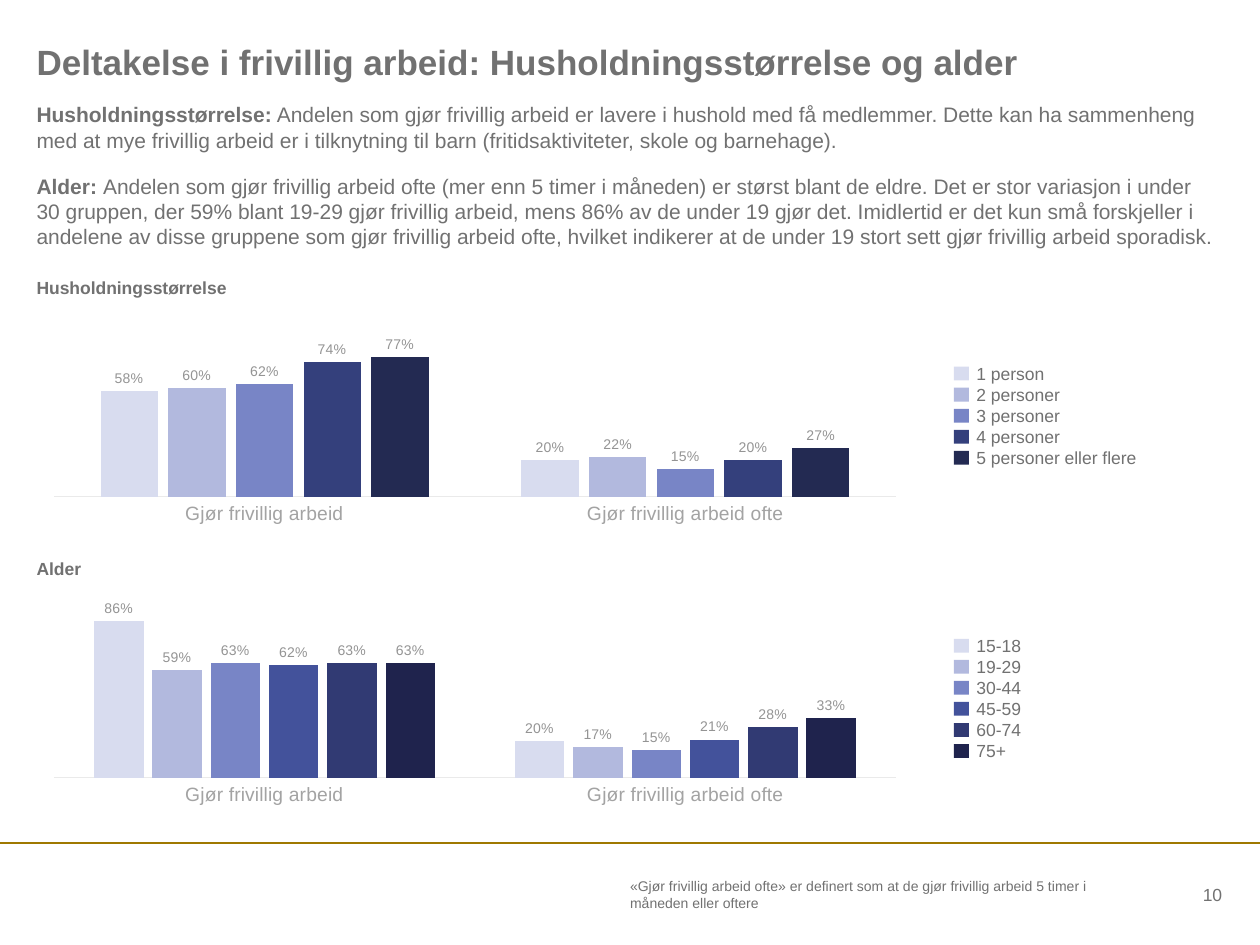
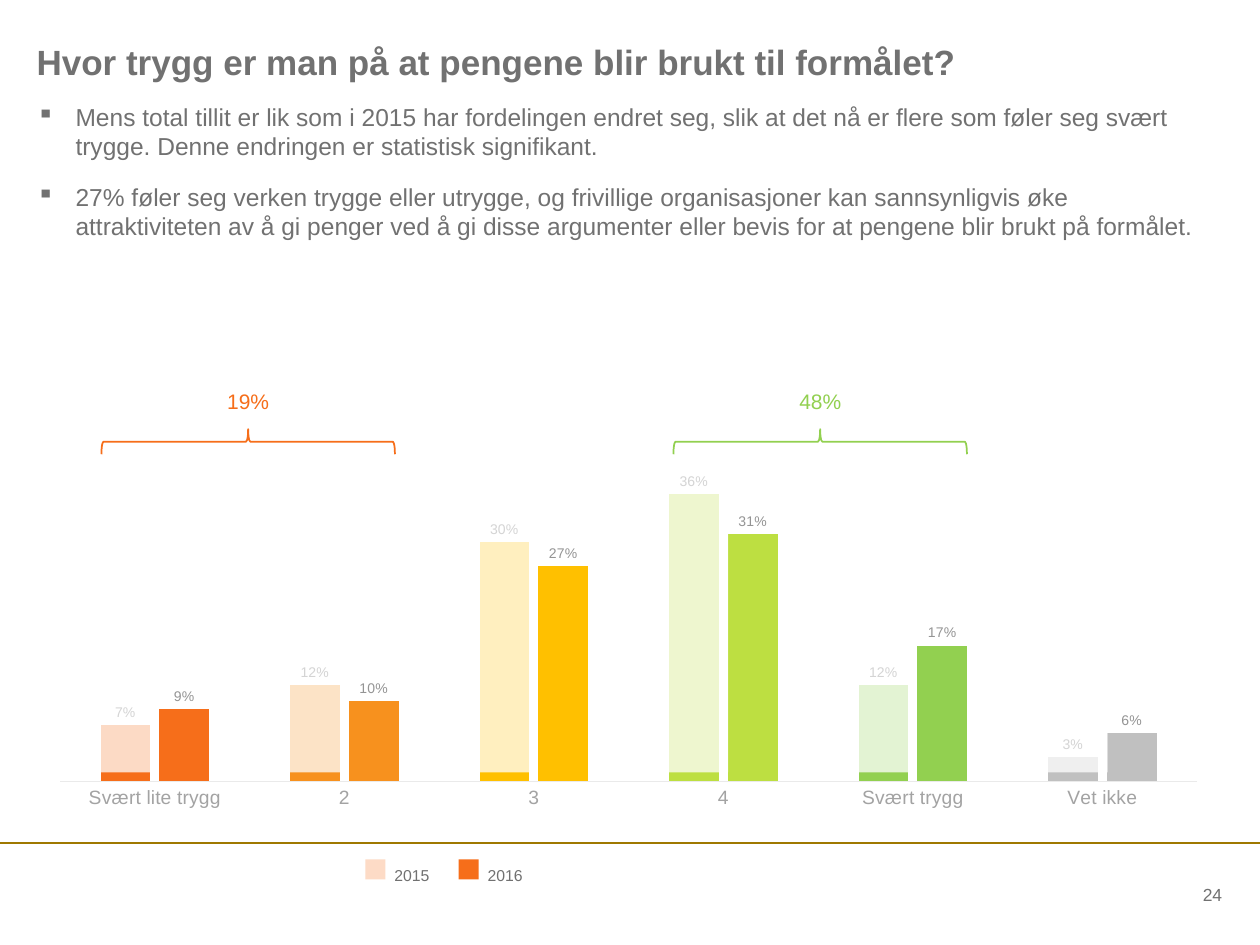
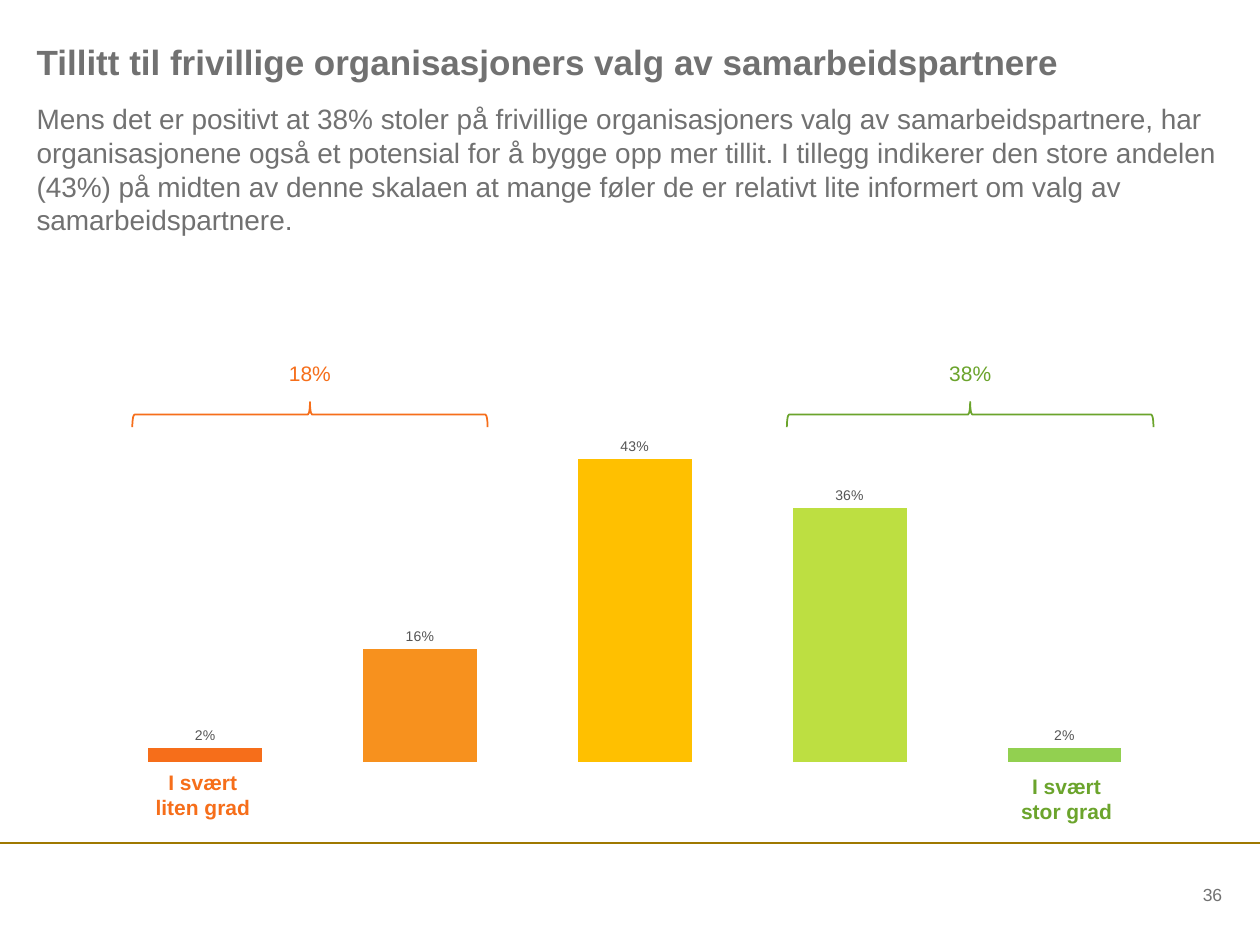
from collections import namedtuple

from lxml import etree
from pptx import Presentation, util as u
from pptx.chart.data import CategoryChartData
from pptx.dml.color import RGBColor
from pptx.enum import chart as ch, shapes, text
from pptx.oxml import parse_xml
from pptx.oxml.ns import nsdecls, qn

FONT = "Arial"
GREY = RGBColor(0x71, 0x71, 0x71)
AXIS_TEXT = RGBColor(0xA3, 0xA3, 0xA3)
AXIS_LINE = RGBColor(0xEA, 0xEA, 0xEA)
PALE_LABEL = RGBColor(0x94, 0x94, 0x94)
DARK_LABEL = RGBColor(0x55, 0x55, 0x55)
GOLD = RGBColor(0x9F, 0x78, 0x00)
WHITE = RGBColor(0xFF, 0xFF, 0xFF)
ORANGE = RGBColor(0xF6, 0x6E, 0x1A)
PEACH = RGBColor(0xFD, 0xDB, 0xC6)
LEAF = RGBColor(0x92, 0xD0, 0x50)
GREEN = RGBColor(0x6B, 0xA4, 0x2C)
TRUST = [ORANGE, RGBColor(0xF7, 0x91, 0x1E), RGBColor(0xFF, 0xC0, 0x00),
         RGBColor(0xBD, 0xDF, 0x41), LEAF, RGBColor(0xC0, 0xC0, 0xC0)]
BLUES = [RGBColor(0xD8, 0xDC, 0xEF), RGBColor(0xB2, 0xB9, 0xDE), RGBColor(0x78, 0x85, 0xC6)]
HOUSEHOLD_BLUES = BLUES + [RGBColor(0x34, 0x40, 0x7C), RGBColor(0x23, 0x2A, 0x52)]
AGE_BLUES = BLUES + [RGBColor(0x43, 0x52, 0x9B), RGBColor(0x31, 0x3A, 0x73),
                     RGBColor(0x1F, 0x23, 0x4D)]

WIDTH, HEIGHT = u.Inches(10), u.Inches(7.5)
COLUMNS, ROWS = 100, 75
MARGIN = 2.9
LINE_ROWS = 1.67
LEFT, CENTER, RIGHT = text.PP_ALIGN.LEFT, text.PP_ALIGN.CENTER, text.PP_ALIGN.RIGHT

Box = namedtuple("Box", "x y w h")
BODY = Box(MARGIN, 8.1, 94, 4.3)


def inside(box, x, y, w, h):
    """Return a box whose corner is offset from another box's corner."""
    return Box(box.x + x, box.y + y, w, h)


def emu(box):
    """Convert grid columns and rows to slide lengths."""
    return (round(box.x * WIDTH / COLUMNS), round(box.y * HEIGHT / ROWS),
            round(box.w * WIDTH / COLUMNS), round(box.h * HEIGHT / ROWS))


def set_font(font, size, color=GREY, bold=False):
    """Apply the shared typeface with a size and a colour."""
    font.name, font.size, font.bold = FONT, u.Pt(size), bold
    font.color.rgb = color


def add_text(slide, box, lines, size, color=GREY, bold=False, align=LEFT,
             middle=False, gap=0, spacing=None, wrap=True):
    """Place lines of text, each a string or a list of (string, bold) runs."""
    frame = slide.shapes.add_textbox(*emu(box)).text_frame
    frame.word_wrap = wrap
    if wrap:
        frame.margin_left = frame.margin_right = frame.margin_top = frame.margin_bottom = 0
    if middle:
        frame.vertical_anchor = text.MSO_ANCHOR.MIDDLE
    for index, line in enumerate(lines):
        paragraph = frame.add_paragraph() if index else frame.paragraphs[0]
        paragraph.alignment = align
        if spacing:
            paragraph.line_spacing = spacing
        if index and gap:
            paragraph.space_before = u.Pt(gap)
        for words, heavy in [(line, bold)] if isinstance(line, str) else line:
            run = paragraph.add_run()
            run.text = words
            set_font(run.font, size, color, heavy)
    return frame


def add_bullets(frame):
    """Give every paragraph a small square bullet and a hanging indent."""
    for paragraph in frame.paragraphs:
        properties = paragraph._p.get_or_add_pPr()
        properties.set("marL", str(u.Inches(0.31)))
        properties.set("indent", str(-u.Inches(0.31)))
        etree.SubElement(properties, qn("a:buChar")).set("char", "▪")


def add_rect(slide, box, color, alpha=None):
    """Draw a borderless rectangle, optionally see-through."""
    rect = slide.shapes.add_shape(shapes.MSO_SHAPE.RECTANGLE, *emu(box))
    rect.shadow.inherit = False
    rect.fill.solid()
    rect.fill.fore_color.rgb = color
    rect.line.fill.background()
    if alpha:
        fill = rect._element.spPr.find(qn("a:solidFill"))
        etree.SubElement(fill[0], qn("a:alpha")).set("val", str(alpha * 1000))


def add_frame(deck, title, number):
    """Add a slide with title, gold rule and page number."""
    slide = deck.slides.add_slide(deck.slide_layouts[6])
    left, top, width, _ = emu(Box(0, 66.9, COLUMNS, 0))
    rule = slide.shapes.add_connector(shapes.MSO_CONNECTOR.STRAIGHT, left, top, width, top)
    rule.line.color.rgb, rule.line.width = GOLD, u.Pt(1.5)
    etree.SubElement(rule._element.spPr, qn("a:effectLst"))
    add_text(slide, Box(MARGIN, 3.2, 94.1, 4.6), [title], 20, bold=True)
    add_text(slide, Box(89, 70, 8, 2), [str(number)], 10, align=RIGHT, middle=True)
    return slide


def add_columns(slide, box, categories, rows, top, plot_height, gap=162, series_colors=None,
                point_colors=None, label_colors=(PALE_LABEL,), show_categories=True):
    """Draw clustered percentage columns with value labels."""
    data = CategoryChartData(number_format="0%")
    data.categories = categories
    for index, values in enumerate(rows, 1):
        data.add_series(f"Series {index}", values)
    chart = slide.shapes.add_chart(ch.XL_CHART_TYPE.COLUMN_CLUSTERED, *emu(box), data).chart
    set_font(chart.font, 10)
    chart.has_legend = chart.has_title = False
    value_axis, category_axis = chart.value_axis, chart.category_axis
    value_axis.minimum_scale, value_axis.maximum_scale = 0, top
    value_axis.has_major_gridlines = value_axis.visible = False
    category_axis.visible = show_categories
    category_axis.major_tick_mark = ch.XL_TICK_MARK.NONE
    set_font(category_axis.tick_labels.font, 11, AXIS_TEXT)
    category_axis.format.line.color.rgb = AXIS_LINE
    category_axis.format.line.width = u.Pt(0.75)
    plot = chart.plots[0]
    plot.gap_width, plot.overlap, plot.vary_by_categories = gap, -18, False
    for index, series in enumerate(plot.series):
        series.invert_if_negative = False
        if series_colors:
            series.format.fill.solid()
            series.format.fill.fore_color.rgb = series_colors[index]
        for point, color in enumerate(point_colors or []):
            fill = series.points[point].format.fill
            fill.solid()
            fill.fore_color.rgb = color
        labels = series.data_labels
        labels.show_value = True
        labels.number_format, labels.number_format_is_linked = "0%", False
        labels.position = ch.XL_LABEL_POSITION.OUTSIDE_END
        set_font(labels.font, 8, label_colors[index % len(label_colors)])
    place_plot(chart, plot_height)


def place_plot(chart, height):
    """Fix the inner plot area as shares of the chart."""
    plot_area = chart._chartSpace.chart.plotArea
    for old in plot_area.findall(qn("c:layout")):
        plot_area.remove(old)
    shares = "".join(f'<c:{key} val="{share}"/>' for key, share in
                     (("x", 0.02), ("y", 0.02), ("w", 0.96), ("h", height)))
    plot_area.insert(0, parse_xml(
        f'<c:layout {nsdecls("c")}><c:manualLayout><c:layoutTarget val="inner"/>'
        f'<c:xMode val="edge"/><c:yMode val="edge"/>{shares}</c:manualLayout></c:layout>'))


def add_legend(slide, box, names, colors):
    """List names beside their colour swatches."""
    for row, color in enumerate(colors):
        add_rect(slide, inside(box, 0, 0.3 + row * LINE_ROWS, 1.2, 1.1), color)
    add_text(slide, inside(box, 1.8, 0, box.w - 1.8, box.h), names, 10)


def add_breakdown(slide, box, heading, names, rows, colors):
    """Show one heading with its chart and legend."""
    add_text(slide, inside(box, 0, 0, 17.9, 1.7), [heading], 10, bold=True)
    add_columns(slide, inside(box, 0, 2.65, 69.6, 17.4),
                ["Gjør frivillig arbeid", "Gjør frivillig arbeid ofte"],
                rows, 1, 0.83, series_colors=colors)
    legend_top = 6.8 if len(names) == 5 else 6.1
    add_legend(slide, inside(box, 72.8, legend_top, 17.2, len(names) * LINE_ROWS), names, colors)


def add_bracket(slide, box, total, color):
    """Span a group of columns with a brace and its total."""
    add_text(slide, inside(box, box.w / 2 - 3.1, 0, 6.2, 2.8), [total], 12, color, align=CENTER)
    thickness = 2
    upright = inside(box, (box.w - thickness) / 2, box.h - (thickness + box.w) / 2,
                     thickness, box.w)
    brace = slide.shapes.add_shape(shapes.MSO_SHAPE.RIGHT_BRACE, *emu(upright))
    brace.rotation = 270
    brace.shadow.inherit = False
    brace.fill.background()
    brace.line.color.rgb, brace.line.width = color, u.Pt(1)


def add_year_key(slide, box):
    """Show the pale and the strong colour with their years."""
    for column, (year, color) in enumerate([("2015", PEACH), ("2016", ORANGE)]):
        offset = column * 7.4
        add_rect(slide, inside(box, offset, 1, 1.6, 1.6), color)
        add_text(slide, inside(box, offset + 2.3, 0, 4.6, 3), [year], 9, spacing=2.0)


def build_participation(deck):
    """Build the slide on household size and age."""
    slide = add_frame(deck, "Deltakelse i frivillig arbeid: Husholdningsstørrelse og alder", 10)
    add_text(slide, BODY, [
        [("Husholdningsstørrelse:", True),
         (" Andelen som gjør frivillig arbeid er lavere i hushold med få medlemmer. Dette kan ha "
          "sammenheng med at mye frivillig arbeid er i tilknytning til barn (fritidsaktiviteter, "
          "skole og barnehage).", False)],
        [("Alder: ", True),
         ("Andelen som gjør frivillig arbeid ofte (mer enn 5 timer i måneden) er størst blant de "
          "eldre. Det er stor variasjon i under 30 gruppen, der 59% blant 19-29 gjør frivillig "
          "arbeid, mens 86% av de under 19 gjør det. Imidlertid er det kun små forskjeller i "
          "andelene av disse gruppene som gjør frivillig arbeid ofte, hvilket indikerer at de "
          "under 19 stort sett gjør frivillig arbeid sporadisk.", False)]], 12, gap=12)
    add_text(slide, Box(50, 70, 38.5, 2),
             ["«Gjør frivillig arbeid ofte» er definert som at de gjør frivillig arbeid 5 timer i "
              "måneden eller oftere"], 8, middle=True)
    add_breakdown(slide, Box(MARGIN, 22, 90, 20), "Husholdningsstørrelse",
                  ["1 person", "2 personer", "3 personer", "4 personer", "5 personer eller flere"],
                  [(0.58, 0.2), (0.6, 0.22), (0.62, 0.15), (0.74, 0.2), (0.77, 0.27)],
                  HOUSEHOLD_BLUES)
    add_breakdown(slide, Box(MARGIN, 44.3, 90, 20), "Alder",
                  ["15-18", "19-29", "30-44", "45-59", "60-74", "75+"],
                  [(0.86, 0.2), (0.59, 0.17), (0.63, 0.15), (0.62, 0.21), (0.63, 0.28),
                   (0.63, 0.33)], AGE_BLUES)


def build_confidence(deck):
    """Build the slide on confidence in how money is used."""
    slide = add_frame(deck, "Hvor trygg er man på at pengene blir brukt til formålet?", 24)
    add_bullets(add_text(slide, BODY, [
        "Mens total tillit er lik som i 2015 har fordelingen endret seg, slik at det nå er flere "
        "som føler seg svært trygge. Denne endringen er statistisk signifikant.",
        "27% føler seg verken trygge eller utrygge, og frivillige organisasjoner kan sannsynligvis "
        "øke attraktiviteten av å gi penger ved å gi disse argumenter eller bevis for at pengene "
        "blir brukt på formålet."], 14, gap=12))
    area = Box(MARGIN, 36.1, 94, 28.8)
    add_columns(slide, area, ["Svært lite trygg", "2", "3", "4", "Svært trygg", "Vet ikke"],
                [(0.07, 0.12, 0.3, 0.36, 0.12, 0.03), (0.09, 0.1, 0.27, 0.31, 0.17, 0.06)],
                0.4, 0.88, point_colors=TRUST, label_colors=(DARK_LABEL, PALE_LABEL))
    add_bracket(slide, Box(8.05, 30.8, 23.3, 5.25), "19%", ORANGE)
    add_bracket(slide, Box(53.45, 30.8, 23.3, 5.25), "48%", LEAF)
    veil_bottom = 25.2
    for left, height in [(3.3, 7.2), (18.2, 9.4), (33, 20.5), (48.7, 24.7), (63.6, 9.4),
                         (78.8, 4)]:
        add_rect(slide, inside(area, left, veil_bottom - height, 6.2, height), WHITE, 75)
    add_year_key(slide, Box(29, 67.2, 14, 3))


def build_partners(deck):
    """Build the slide on trust in the choice of partners."""
    slide = add_frame(deck, "Tillitt til frivillige organisasjoners valg av samarbeidspartnere", 36)
    add_text(slide, BODY, [
        "Mens det er positivt at 38% stoler på frivillige organisasjoners valg av "
        "samarbeidspartnere, har organisasjonene også et potensial for å bygge opp mer tillit. I "
        "tillegg indikerer den store andelen (43%) på midten av denne skalaen at mange føler de er "
        "relativt lite informert om valg av samarbeidspartnere."], 16)
    add_columns(slide, Box(6, 31.9, 88.8, 29.2), ["1", "2", "3", "4", "5"],
                [(0.02, 0.16, 0.43, 0.36, 0.02)], 0.5, 0.96, gap=89, point_colors=TRUST[:5],
                label_colors=(DARK_LABEL,), show_categories=False)
    for box, lines, color in [
            (Box(11.3, 60.6, 9.6, 5), ["I svært", "liten grad"], ORANGE),
            (Box(80, 60.9, 9.3, 5), ["I svært", "stor grad"], GREEN)]:
        add_text(slide, box, lines, 12, color, bold=True, align=CENTER, wrap=False)
    add_bracket(slide, Box(10.5, 28.6, 28.2, 5.3), "18%", ORANGE)
    add_bracket(slide, Box(62.45, 28.6, 29.1, 5.3), "38%", GREEN)


def main():
    """Build and save the three slides."""
    deck = Presentation()
    deck.slide_width, deck.slide_height = WIDTH, HEIGHT
    build_participation(deck)
    build_confidence(deck)
    build_partners(deck)
    deck.save("out.pptx")


if __name__ == "__main__":
    main()
